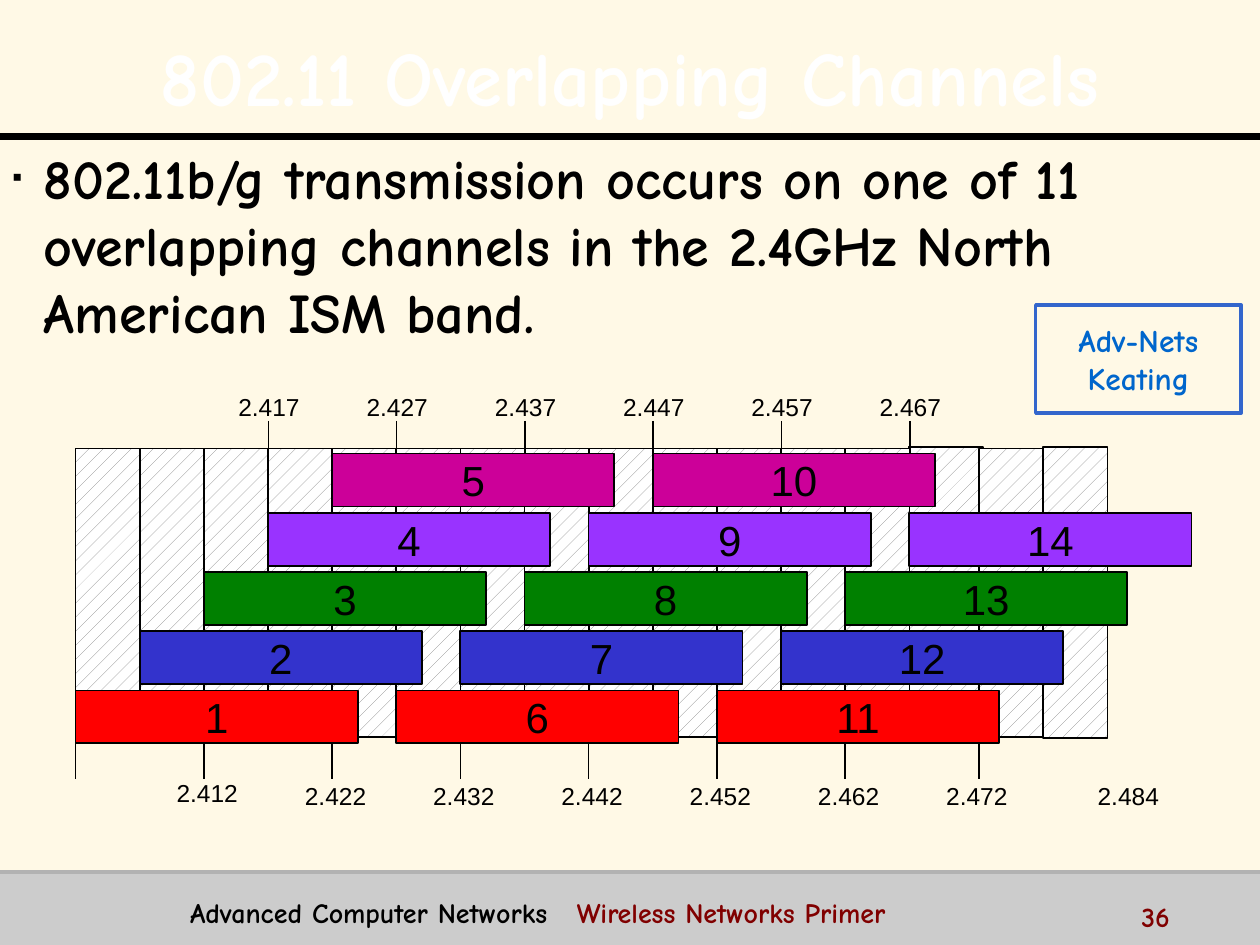
from lxml.etree import SubElement
from pptx import Presentation
from pptx.dml.color import RGBColor
from pptx.enum.dml import MSO_PATTERN
from pptx.enum.shapes import MSO_CONNECTOR, MSO_SHAPE
from pptx.enum.text import MSO_ANCHOR, PP_ALIGN
from pptx.oxml.ns import qn
from pptx.util import Inches, Pt

CHANNEL_STEP = 0.509
BAND_LEFT = 0.6
ROW_COLOURS = ["FF0000", "3333CC", "008000", "9933FF", "CC0099"]


def colour(value):
    """Turn a hex string into a colour."""
    return RGBColor.from_string(value)


class ChannelSlide:
    """Hold the slide and its style, and draw each kind of element."""

    display_font = "Comic Neue"
    label_font = "Arial"
    black = "000000"

    def __init__(self, presentation, background):
        """Add a blank slide with a plain background."""
        self.slide = presentation.slides.add_slide(presentation.slide_layouts[6])
        fill = self.slide.background.fill
        fill.solid()
        fill.fore_color.rgb = colour(background)

    def format_run(self, run, size, font, text_colour):
        """Style one run; the display font is always bold."""
        run.font.size = Pt(size)
        run.font.name = font
        run.font.bold = font == self.display_font
        run.font.color.rgb = colour(text_colour)

    def set_text(self, shape, text, size, font, text_colour, align, anchor, wrap):
        """Put styled text in a shape and return its first paragraph."""
        frame = shape.text_frame
        frame.text = text
        frame.word_wrap = wrap
        frame.vertical_anchor = anchor
        for paragraph in frame.paragraphs:
            paragraph.alignment = align
            for run in paragraph.runs:
                self.format_run(run, size, font, text_colour)
        return frame.paragraphs[0]

    def text(self, box, text, size, font=display_font, text_colour=black,
             align=PP_ALIGN.LEFT, anchor=MSO_ANCHOR.TOP, wrap=True):
        """Add a text box and return its first paragraph."""
        shape = self.slide.shapes.add_textbox(*map(Inches, box))
        return self.set_text(shape, text, size, font, text_colour, align, anchor, wrap)

    def rectangle(self, box, fill=None, line=None, width=1):
        """Add a rectangle with an optional fill and outline."""
        shape = self.slide.shapes.add_shape(MSO_SHAPE.RECTANGLE, *map(Inches, box))
        shape.shadow.inherit = False
        if fill:
            shape.fill.solid()
            shape.fill.fore_color.rgb = colour(fill)
        else:
            shape.fill.background()
        if line:
            shape.line.color.rgb = colour(line)
            shape.line.width = Pt(width)
        else:
            shape.line.fill.background()
        return shape

    def labelled_rectangle(self, box, text, size, font, text_colour, **style):
        """Add a rectangle with centred text."""
        shape = self.rectangle(box, **style)
        self.set_text(shape, text, size, font, text_colour,
                      PP_ALIGN.CENTER, MSO_ANCHOR.MIDDLE, False)

    def hatched_cell(self, box):
        """Add a patterned cell of the frequency band."""
        fill = self.rectangle(box, line=self.black).fill
        fill.patterned()
        fill.pattern = MSO_PATTERN.PERCENT_10
        fill.fore_color.rgb = colour("808080")
        fill.back_color.rgb = colour("FFFFFF")

    def line(self, start, end, width=1, line_colour=black):
        """Add a straight line."""
        connector = self.slide.shapes.add_connector(
            MSO_CONNECTOR.STRAIGHT, *map(Inches, start + end))
        connector.line.color.rgb = colour(line_colour)
        connector.line.width = Pt(width)
        SubElement(connector._element.spPr, qn("a:effectLst"))

    def frequency(self, left, top, text):
        """Add a frequency label."""
        self.text((left, top, 0.69, 0.33), text, 14, self.label_font,
                  align=PP_ALIGN.CENTER, anchor=MSO_ANCHOR.MIDDLE, wrap=False)

    def title(self, box, text):
        """Add the white title with its hard black shadow."""
        paragraph = self.text(box, text, 44, text_colour="FFFFFF",
                              align=PP_ALIGN.CENTER, anchor=MSO_ANCHOR.MIDDLE)
        paragraph.line_spacing = 1.1
        properties = paragraph.runs[0]._r.get_or_add_rPr()
        effects = SubElement(properties, qn("a:effectLst"))
        properties.find(qn("a:solidFill")).addnext(effects)
        shadow = SubElement(effects, qn("a:outerShdw"), dist="35921", dir="2700000")
        SubElement(shadow, qn("a:srgbClr"), val=self.black)

    def bullet(self, box, text):
        """Add a bulleted statement with a hanging indent."""
        paragraph = self.text(box, text, 32)
        properties = paragraph._p.get_or_add_pPr()
        properties.set("marL", str(Inches(0.25)))
        properties.set("indent", str(-Inches(0.25)))
        bullet_colour = SubElement(properties, qn("a:buClr"))
        SubElement(bullet_colour, qn("a:srgbClr"), val=self.black)
        SubElement(properties, qn("a:buSzPct"), val="50000")
        SubElement(properties, qn("a:buFont"), typeface=self.label_font)
        SubElement(properties, qn("a:buChar"), char="▪")

    def footer(self, box, course, topic, tab):
        """Add the course name and, at a tab stop, the topic."""
        paragraph = self.text(box, course + "\t", 16)
        tabs = SubElement(paragraph._p.get_or_add_pPr(), qn("a:tabLst"))
        SubElement(tabs, qn("a:tab"), pos=str(Inches(tab)), algn="l")
        run = paragraph.add_run()
        run.text = topic
        self.format_run(run, 16, self.display_font, "800000")


def main():
    """Build and save the slide."""
    presentation = Presentation()
    presentation.slide_width = Inches(10)
    presentation.slide_height = Inches(7.5)
    page = ChannelSlide(presentation, "FFF9E6")

    page.rectangle((0, 6.92, 10, 0.58), fill="CCCCCC")
    page.line((0, 1.08), (10, 1.08), width=4)
    page.line((0, 6.92), (10, 6.92), width=2, line_colour="B2B2B2")
    page.title((0.2, 0.13, 9.61, 0.87), "802.11 Overlapping Channels")
    page.bullet((0, 1.09, 8.75, 1.37),
                "802.11b/g transmission occurs on one of 11 overlapping "
                "channels in the 2.4GHz North American ISM band.")

    page.hatched_cell((8.28, 3.55, 0.51, 2.31))
    page.hatched_cell((7.21, 3.55, 0.59, 2.31))
    for left in [BAND_LEFT + CHANNEL_STEP * i for i in range(13)] + [7.77]:
        page.hatched_cell((left, 3.56, 0.51, 2.29))

    tick_step = 2 * CHANNEL_STEP
    for x in [BAND_LEFT + tick_step * i for i in range(7)] + [7.77]:
        page.line((x, 5.72), (x, 6.18))
    for i in range(6):
        x = 2.13 + tick_step * i
        page.line((x, 3.34), (x, 3.8))
        page.frequency(1.79 + tick_step * i, 3.06, f"{2.417 + i / 100:.3f}")
    for i in range(7):
        page.frequency(1.3 + tick_step * i, 6.15 if i else 6.13, f"{2.412 + i / 100:.3f}")
    page.frequency(8.61, 6.15, "2.484")

    for i in range(14):
        row = i % len(ROW_COLOURS)
        box = (BAND_LEFT + CHANNEL_STEP * i, 5.48 - 0.47 * row, 2.24, 0.42)
        page.labelled_rectangle(box, str(i + 1), 24, page.label_font, page.black,
                                fill=ROW_COLOURS[row], line=page.black)

    page.labelled_rectangle((8.22, 2.42, 1.63, 0.86), "Adv-Nets\nKeating", 18,
                            page.display_font, "0066CC", line="3366CC", width=2)
    page.text((8.96, 7.09, 1, 0.25), "36", 16, text_colour="800000")
    page.footer((1.41, 7.06, 7.28, 0.31), "Advanced Computer Networks",
                "Wireless Networks Primer", 3.07)
    presentation.save("out.pptx")


if __name__ == "__main__":
    main()
